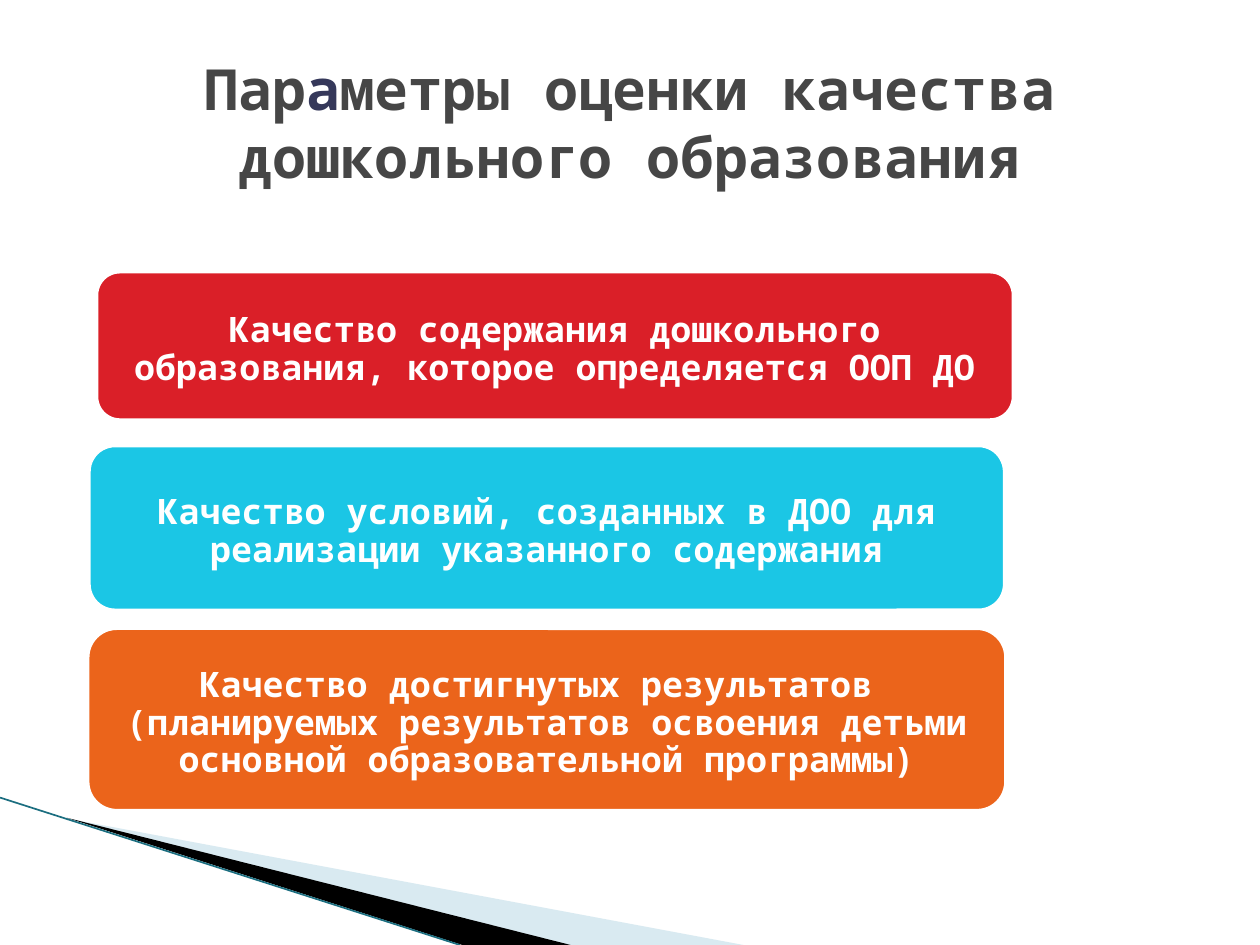
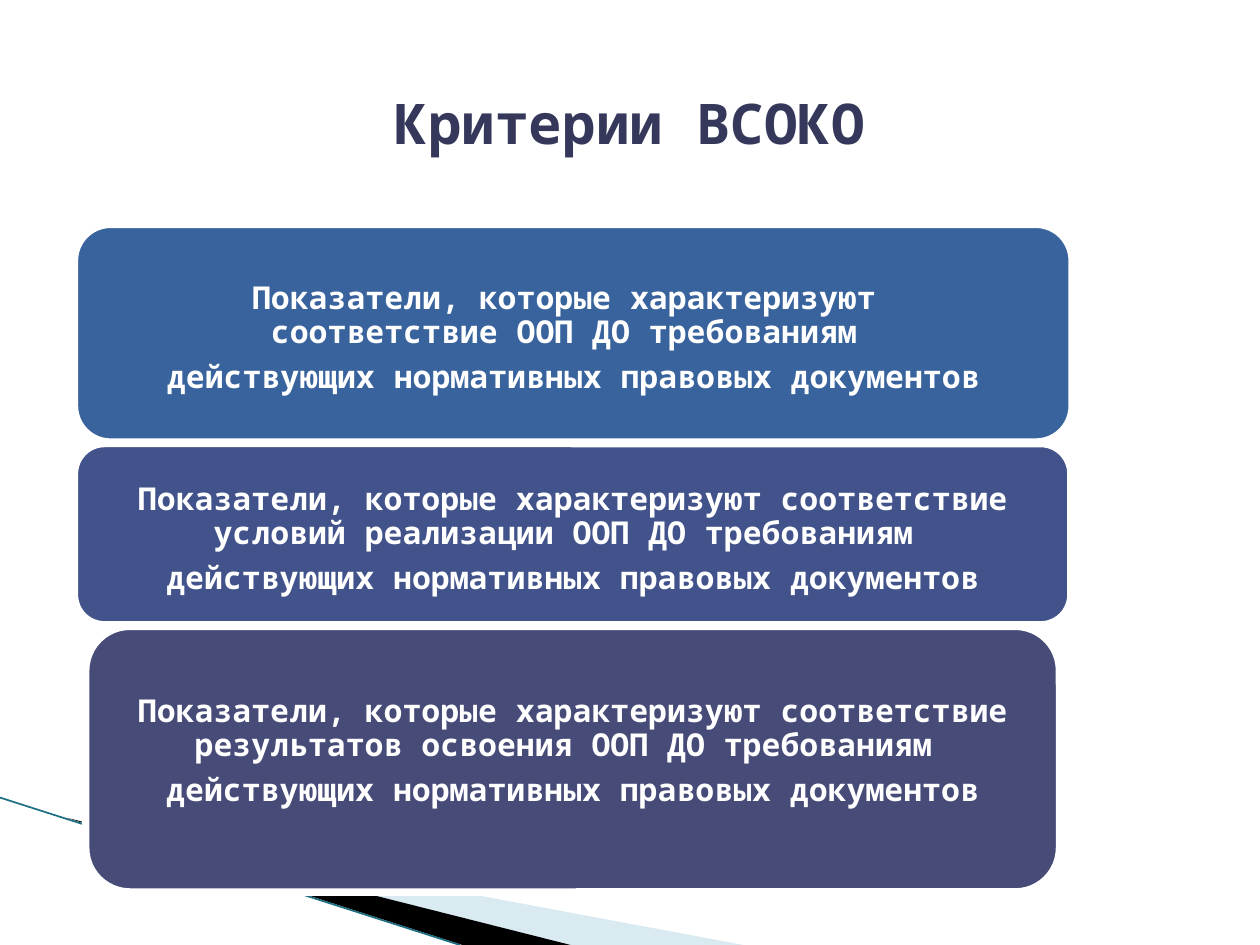
from lxml.etree import SubElement
from pptx import Presentation
from pptx.dml.color import RGBColor
from pptx.enum.shapes import MSO_CONNECTOR, MSO_SHAPE
from pptx.enum.text import MSO_ANCHOR, MSO_AUTO_SIZE, PP_ALIGN
from pptx.oxml.ns import qn
from pptx.util import Inches, Pt

FONT = "Noto Sans Mono"
COLORS = {
    "white": "FFFFFF", "black": "000000", "gray": "464646", "navy": "35385A",
    "pale": "A0CBDC", "teal": "1B6E80", "red": "DA1F28", "cyan": "1BC6E5",
    "orange": "EB641B", "blue": "39639D", "indigo": "41538A", "violet": "474B78",
}
DOCUMENTS = "действующих нормативных правовых документов"

# Title runs and boxes: left, top, width, height, colour, text drop, paragraphs
PAGES = [
    {
        "title": [("Пар", "gray"), ("а", "navy"),
                  ("метры оценки качества дошкольного образования", "gray")],
        "title_size": 32.4,
        "text_size": 20,
        "leading": 21.5,
        "boxes": [
            (0.75, 2.14, 7.31, 1.21, "red", 0.03,
             ["Качество содержания дошкольного образования, "
              "которое определяется ООП ДО"]),
            (0.69, 3.52, 7.3, 1.34, "cyan", 0.03,
             ["Качество условий, созданных в ДОО для реализации "
              "указанного содержания"]),
            (0.68, 4.97, 7.32, 1.48, "orange", 0.03,
             ["Качество достигнутых результатов \v(планируемых результатов "
              "освоения детьми основной образовательной программы)"]),
        ],
    },
    {
        "title": [("Критерии ВСОКО", "navy")],
        "title_size": 32,
        "text_size": 18,
        "leading": 19.4,
        "boxes": [
            (0.59, 1.78, 7.92, 1.73, "blue", 0.04,
             ["Показатели, которые характеризуют \v"
              "соответствие ООП ДО требованиям ", DOCUMENTS]),
            (0.59, 3.52, 7.91, 1.44, "indigo", 0.04,
             ["Показатели, которые характеризуют соответствие условий "
              "реализации ООП ДО требованиям ", DOCUMENTS]),
            (0.68, 4.97, 7.73, 2.11, "violet", -0.06,
             ["Показатели, которые характеризуют соответствие результатов "
              "освоения ООП ДО требованиям ", DOCUMENTS]),
        ],
    },
]


class SlideBuilder:
    """Holds the shared style and the current slide."""

    def __init__(self, deck):
        self.deck = deck
        self.page = None

    def color(self, name):
        return RGBColor.from_string(COLORS[name])

    def new_page(self):
        self.page = self.deck.slides.add_slide(self.deck.slide_layouts[5])
        self.corner_decoration()

    def wedge(self, points, color, opacity=None):
        corners = [(Inches(x), Inches(y)) for x, y in points]
        builder = self.page.shapes.build_freeform(*corners[0], scale=1.0)
        builder.add_line_segments(corners[1:], close=True)
        shape = builder.convert_to_shape()
        shape.shadow.inherit = False
        shape.fill.solid()
        shape.fill.fore_color.rgb = self.color(color)
        shape.line.fill.background()
        if opacity is not None:
            tint = shape._element.spPr.find(qn("a:solidFill"))[0]
            SubElement(tint, qn("a:alpha"), val=str(opacity * 1000))

    def line(self, start, end, color, width):
        connector = self.page.shapes.add_connector(
            MSO_CONNECTOR.STRAIGHT, *map(Inches, start + end))
        connector.line.color.rgb = self.color(color)
        connector.line.width = Pt(width)
        SubElement(connector._element.spPr, qn("a:effectLst"))

    def corner_decoration(self):
        self.wedge([(0.55, 6.5), (5.9, 7.5), (4.52, 7.5)], "pale", opacity=40)
        self.wedge([(0.53, 6.49), (4.53, 7.5), (3.67, 7.5)], "black")
        self.line((0, 6.33), (3.65, 7.5), "teal", 0.95)

    def frame(self, shape, inset, drop):
        """Centre the text vertically, lowered by drop inches."""
        frame = shape.text_frame
        frame.word_wrap = True
        frame.auto_size = MSO_AUTO_SIZE.NONE
        frame.vertical_anchor = MSO_ANCHOR.MIDDLE
        frame.margin_left = frame.margin_right = Inches(inset)
        frame.margin_top = Inches(inset + 2 * max(drop, 0))
        frame.margin_bottom = Inches(inset + 2 * max(-drop, 0))
        return frame

    def fill_paragraph(self, para, spans, size, leading):
        para.alignment = PP_ALIGN.CENTER
        para.line_spacing = Pt(leading)
        for text, color in spans:
            for index, part in enumerate(text.split("\v")):
                if index:
                    para.add_line_break()
                span = para.add_run()
                span.text = part
                span.font.name = FONT
                span.font.size = Pt(size)
                span.font.bold = True
                span.font.color.rgb = self.color(color)

    def title(self, spans, size):
        title = self.page.shapes.title
        title.left, title.top = Inches(0.5), Inches(0.3)
        title.width, title.height = Inches(9), Inches(1.25)
        frame = self.frame(title, 0.05, 0.04)
        self.fill_paragraph(frame.paragraphs[0], spans, size, leading=39)

    def box(self, left, top, width, height, color, drop, texts, size, leading):
        box = self.page.shapes.add_shape(
            MSO_SHAPE.ROUNDED_RECTANGLE,
            *map(Inches, (left, top, width, height)))
        box.shadow.inherit = False
        box.fill.solid()
        box.fill.fore_color.rgb = self.color(color)
        box.line.color.rgb = self.color("white")
        box.line.width = Pt(4.33)
        frame = self.frame(box, 0.08, drop)
        for index, text in enumerate(texts):
            para = frame.add_paragraph() if index else frame.paragraphs[0]
            if index:
                para.space_before = Pt(0.35 * size)
            self.fill_paragraph(para, [(text, "white")], size, leading)


def main():
    deck = Presentation()
    deck.slide_width, deck.slide_height = Inches(10), Inches(7.5)
    builder = SlideBuilder(deck)
    for content in PAGES:
        builder.new_page()
        builder.title(content["title"], content["title_size"])
        for box in content["boxes"]:
            builder.box(*box, content["text_size"], content["leading"])
    deck.save("out.pptx")


if __name__ == "__main__":
    main()
